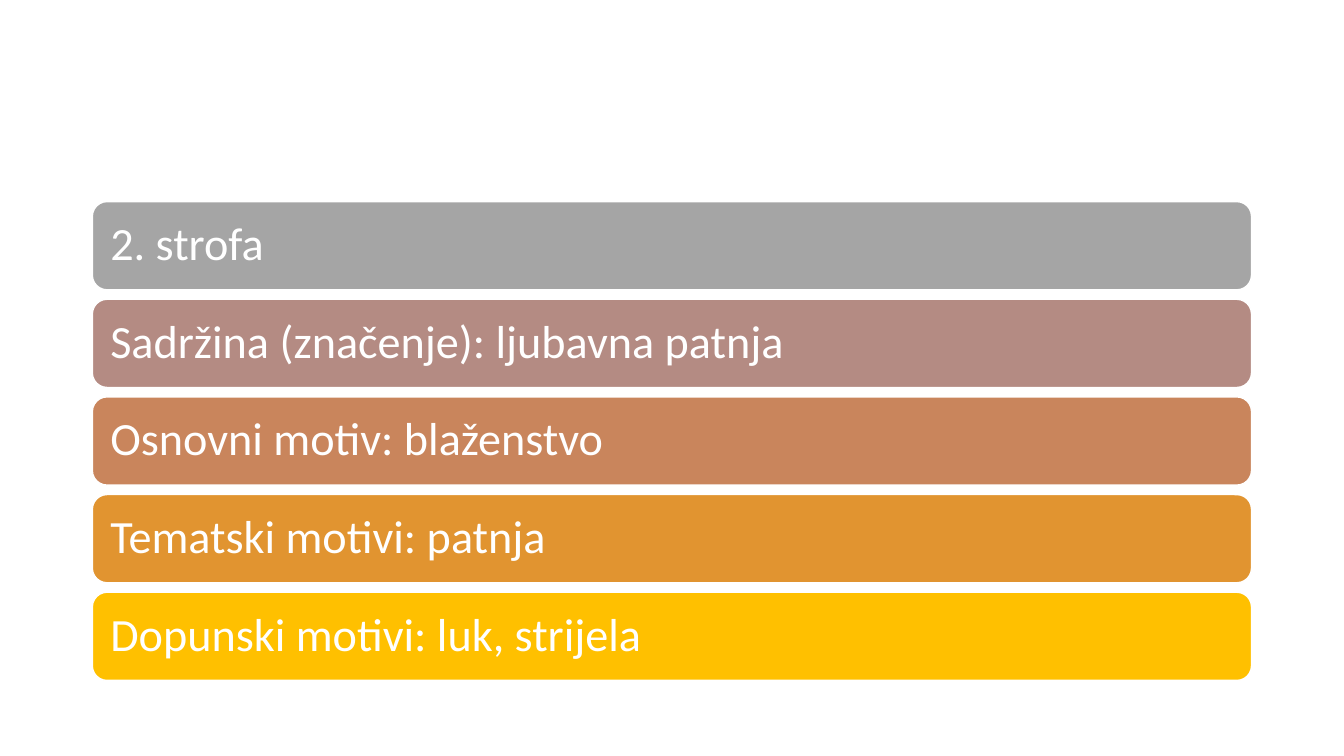
from pptx import Presentation
from pptx.dml.color import RGBColor
from pptx.enum.shapes import MSO_SHAPE
from pptx.enum.text import MSO_ANCHOR, PP_ALIGN
from pptx.util import Pt

ROUNDED = MSO_SHAPE.ROUNDED_RECTANGLE
MIDDLE = MSO_ANCHOR.MIDDLE
LEFT = PP_ALIGN.LEFT
PX = 9525
COLOURS = {
    "white": "FFFFFF",
    "grey": "A5A5A5",
    "rose": "B48B83",
    "copper": "C9855C",
    "orange": "E19430",
    "gold": "FFC000",
}
STANZA_BARS = [
    ("2. strofa", "grey"),
    ("Sadržina (značenje): ljubavna patnja", "rose"),
    ("Osnovni motiv: blaženstvo", "copper"),
    ("Tematski motivi: patnja", "orange"),
    ("Dopunski motivi: luk, strijela", "gold"),
]


def colour(name):
    """Return the named palette colour."""
    return RGBColor.from_string(COLOURS[name])


def add_bar(page, box, text, fill):
    """Draw one rounded bar with its text in the given box."""
    bar = page.shapes.add_shape(ROUNDED, *(length * PX for length in box))
    bar.shadow.inherit = False
    bar.fill.solid()
    bar.fill.fore_color.rgb = colour(fill)
    bar.line.color.rgb = colour("white")
    bar.line.width = Pt(1)
    frame = bar.text_frame
    frame.text = text
    frame.word_wrap = True
    frame.vertical_anchor = MIDDLE
    frame.margin_left = frame.margin_right = 13 * PX
    frame.margin_top = frame.margin_bottom = 13 * PX
    para = frame.paragraphs[0]
    para.alignment = LEFT
    para.line_spacing = 0.9
    font = para.runs[0].font
    font.name = "Calibri"
    font.size = Pt(33)
    font.color.rgb = colour("white")


def add_bar_list(page, box, bars, gap):
    """Stack the bars evenly over the height of the given box."""
    left, top, width, height = box
    bar_height = (height - gap * (len(bars) - 1)) // len(bars)
    for index, (text, fill) in enumerate(bars):
        bar_top = top + index * (bar_height + gap)
        add_bar(page, (left, bar_top, width, bar_height), text, fill)


def main():
    """Build the deck and save it."""
    deck = Presentation()
    deck.slide_width = 1280 * PX
    deck.slide_height = 720 * PX
    page = deck.slides.add_slide(deck.slide_layouts[6])
    add_bar_list(page, (88, 192, 1104, 456), STANZA_BARS, 9)
    deck.save("out.pptx")


if __name__ == "__main__":
    main()
